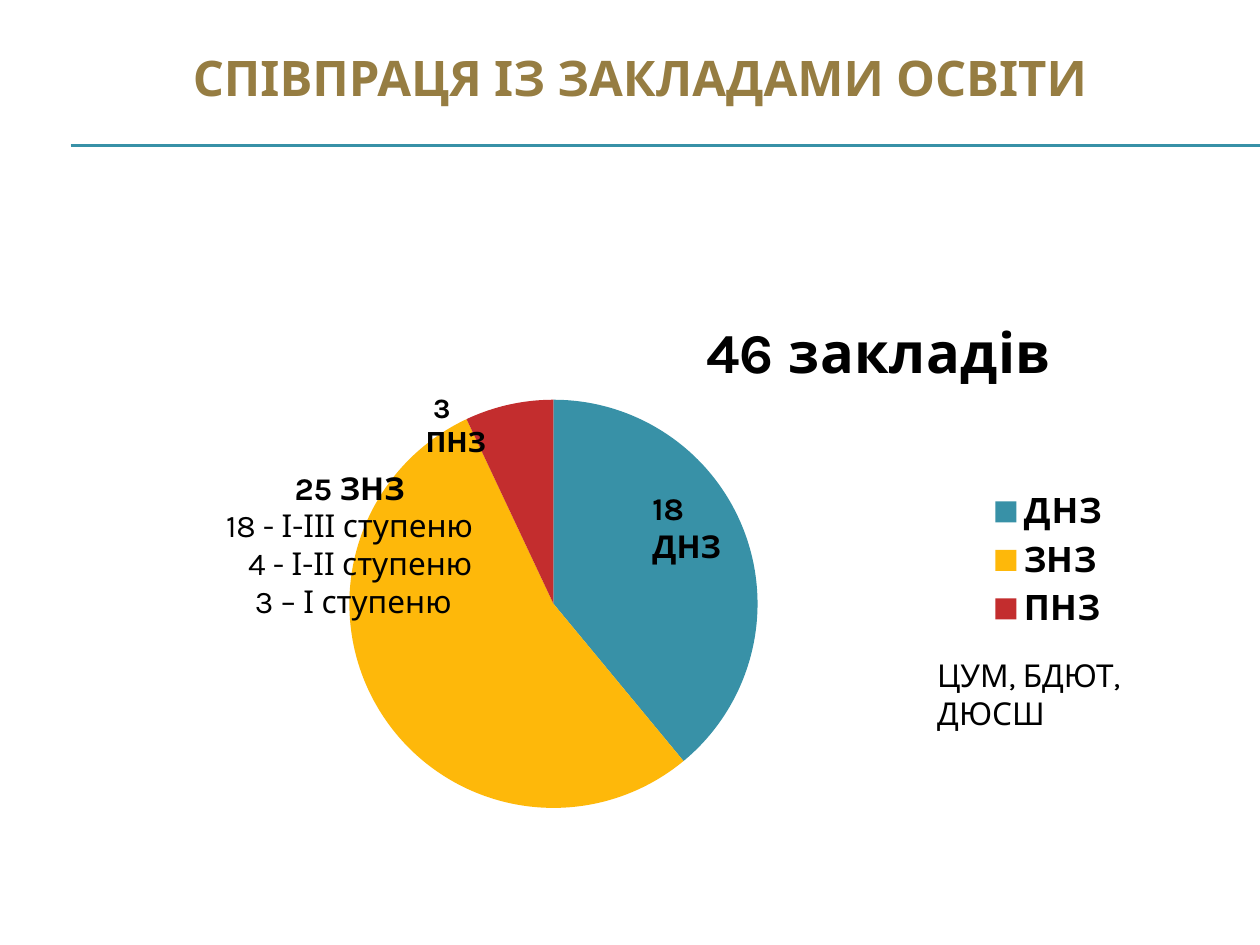
from dataclasses import dataclass
from typing import Optional

from lxml import etree
from pptx import Presentation
from pptx.chart.data import CategoryChartData
from pptx.dml.color import RGBColor
from pptx.enum.chart import XL_CHART_TYPE, XL_LEGEND_POSITION
from pptx.enum.shapes import MSO_CONNECTOR
from pptx.enum.text import MSO_ANCHOR, PP_ALIGN
from pptx.oxml.ns import qn
from pptx.util import Inches, Pt

PIE = XL_CHART_TYPE.PIE
RIGHT = XL_LEGEND_POSITION.RIGHT
LINE = MSO_CONNECTOR.STRAIGHT
MIDDLE = MSO_ANCHOR.MIDDLE
LEFT, CENTER = PP_ALIGN.LEFT, PP_ALIGN.CENTER

WIDE, HIGH = Inches(10), Inches(7.5)
COLS, ROWS = 100, 75
FONT = "Karla"
BLACK, GOLD, TEAL = "000000", "967D42", "3891A7"


@dataclass
class Box:
    col: float
    row: float
    cols: float
    rows: float

    def emu(self) -> tuple:
        return (col_at(self.col), row_at(self.row),
                col_at(self.cols), row_at(self.rows))


@dataclass
class Para:
    text: str
    bold: bool = False
    margin: float = 0
    indent: float = 0


@dataclass
class Note:
    box: Box
    paras: list
    size: int = 18
    align: int = LEFT


@dataclass
class Slice:
    name: str
    value: int
    color: str


SLICES = [
    Slice("ДНЗ", 39, TEAL),
    Slice("ЗНЗ", 54, "FEB80A"),
    Slice("ПНЗ", 7, "C32D2E"),
]
NOTES = [
    Note(Box(16.4, 36.7, 22.7, 13.1), [
        Para("25 ЗНЗ", bold=True),
        Para("18 - І-ІІІ ступеню"),
        Para("4 - І-ІІ ступеню", margin=0.17),
        Para("3 – І ступеню", margin=0.06),
    ], align=CENTER),
    Note(Box(50.8, 38.3, 9.5, 7), [Para("18 ДНЗ", bold=True)]),
    Note(Box(32.8, 30.5, 7.8, 9.1),
         [Para("3 ПНЗ", bold=True, indent=0.06)], size=16),
    Note(Box(73.4, 51.6, 18, 7), [Para("ЦУМ, БДЮТ, ДЮСШ")]),
]
RULES = [11.5, 11.6]


def col_at(col: float) -> int:
    return int(WIDE * col / COLS)


def row_at(row: float) -> int:
    return int(HIGH * row / ROWS)


def paint(target, color: str) -> None:
    target.rgb = RGBColor.from_string(color)


def style(font, size: int, bold: bool, color: str = BLACK) -> None:
    font.name, font.size, font.bold = FONT, Pt(size), bold
    paint(font.color, color)


def draw_rule(slide, row: float) -> None:
    rule = slide.shapes.add_connector(
        LINE, col_at(5.6), row_at(row), WIDE, row_at(row))
    rule.line.width = Pt(0.75)
    paint(rule.line.color, TEAL)
    etree.SubElement(rule._element.spPr, qn("a:effectLst"))


def draw_title(slide, box: Box, text: str) -> None:
    title = slide.shapes.title
    title.left, title.top, title.width, title.height = box.emu()
    frame = title.text_frame
    frame.vertical_anchor = MIDDLE
    frame.margin_bottom = row_at(4.7)
    para = frame.paragraphs[0]
    para.alignment = CENTER
    run = para.add_run()
    run.text = text
    style(run.font, 28, True, GOLD)


def draw_note(slide, note: Note) -> None:
    frame = slide.shapes.add_textbox(*note.box.emu()).text_frame
    frame.word_wrap = True
    for i, item in enumerate(note.paras):
        para = frame.add_paragraph() if i else frame.paragraphs[0]
        para.alignment = note.align
        props = para._p.get_or_add_pPr()
        props.set("marL", str(Inches(item.margin)))
        props.set("indent", str(Inches(item.indent)))
        run = para.add_run()
        run.text = item.text
        style(run.font, note.size, item.bold)


def set_layout(part, index: int, inner: bool = False, **shares: float) -> None:
    for old in part.findall(qn("c:layout")):
        part.remove(old)
    layout = etree.Element(qn("c:layout"))
    manual = etree.SubElement(layout, qn("c:manualLayout"))
    marks = [("layoutTarget", "inner")] if inner else []
    marks += [("xMode", "edge"), ("yMode", "edge")]
    marks += [(key, str(share)) for key, share in shares.items()]
    for tag, value in marks:
        etree.SubElement(manual, qn(f"c:{tag}")).set("val", value)
    part.insert(index, layout)


def draw_pie(slide, box: Box, slices: list) -> None:
    data = CategoryChartData()
    data.categories = [item.name for item in slices]
    data.add_series("Series 1", [item.value for item in slices])
    chart = slide.shapes.add_chart(PIE, *box.emu(), data).chart
    style(chart.font, 18, False)

    chart.has_title = True
    run = chart.chart_title.text_frame.paragraphs[0].add_run()
    run.text = "46 закладів"
    style(run.font, 32, True)
    set_layout(chart.chart_title._element, 1, x=0.57, y=0.04)

    chart.has_legend = True
    chart.legend.position = RIGHT
    chart.legend.include_in_layout = False
    style(chart.legend.font, 20, True)
    set_layout(chart.legend._element, 1, x=0.85, y=0.37, w=0.13, h=0.28)

    plot = chart.plots[0]
    plot.vary_by_categories = True
    for i, item in enumerate(slices):
        fill = plot.series[0].points[i].format.fill
        fill.solid()
        paint(fill.fore_color, item.color)
    area = chart._chartSpace.find(".//" + qn("c:plotArea"))
    set_layout(area, 0, inner=True, x=0.23, y=0.21, w=0.4, h=0.76)


def main() -> None:
    deck = Presentation()
    deck.slide_width, deck.slide_height = WIDE, HIGH
    slide = deck.slides.add_slide(deck.slide_layouts.get_by_name("Title Only"))
    for row in RULES:
        draw_rule(slide, row)
    draw_title(slide, Box(3.3, 2.3, 95, 11.8), "СПІВПРАЦЯ ІЗ ЗАКЛАДАМИ ОСВІТИ")
    draw_pie(slide, Box(9.1, 22.5, 81, 43.1), SLICES)
    for note in NOTES:
        draw_note(slide, note)
    deck.save("out.pptx")


if __name__ == "__main__":
    main()
